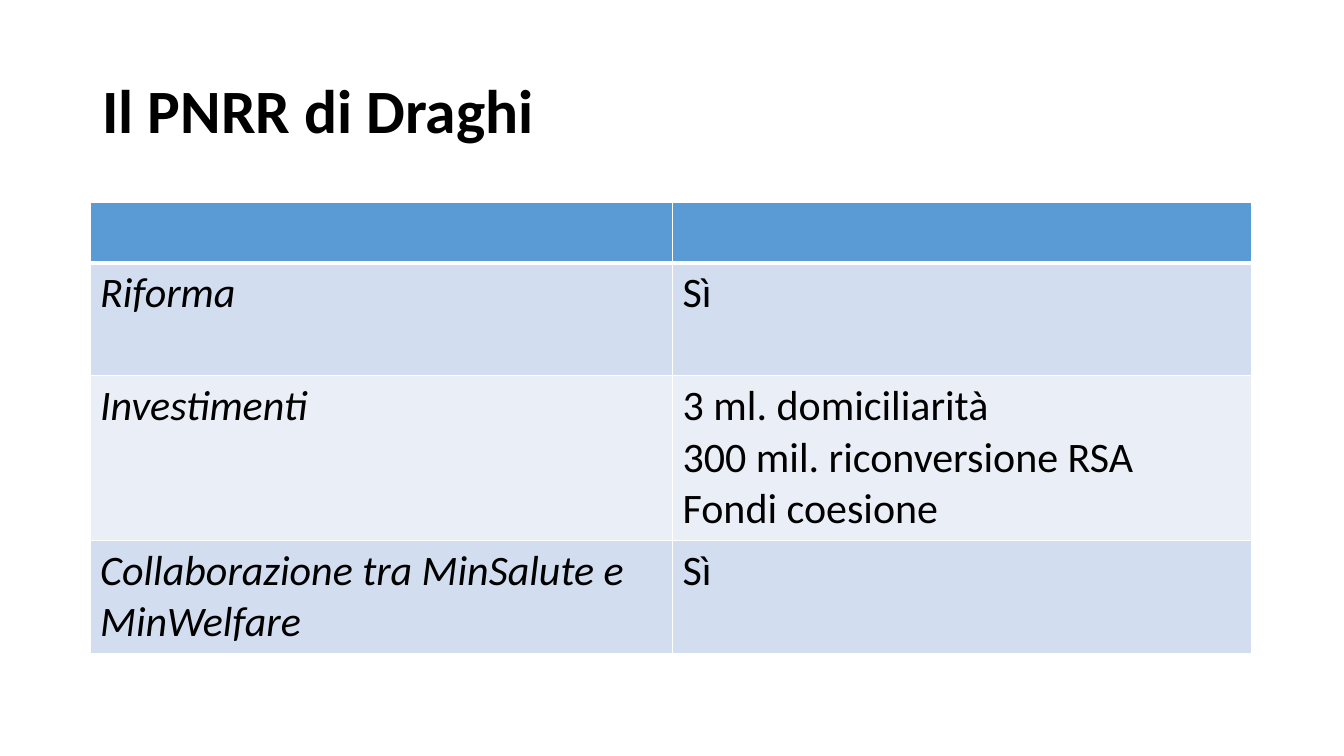
import pptx
import pptx.dml.color
import pptx.enum.text
import pptx.oxml
import pptx.oxml.ns
import pptx.util

Cm = pptx.util.Cm
Pt = pptx.util.Pt


def rgb(value):
    return pptx.dml.color.RGBColor.from_string(value)


class Deck:
    font = "Calibri"
    ink = "000000"
    header = "5B9BD5"
    bands = ("D2DEEF", "EAEFF7")
    line = "FFFFFF"

    def __init__(self, width, height):
        self.prs = pptx.Presentation()
        self.prs.slide_width = Cm(width)
        self.prs.slide_height = Cm(height)
        self.s = self.prs.slides.add_slide(self.prs.slide_layouts[5])

    def text(self, tf, lines, **formats):
        formats = {"name": self.font, **formats}
        for i, line in enumerate(lines):
            p = tf.paragraphs[0] if i == 0 else tf.add_paragraph()
            p.alignment = pptx.enum.text.PP_ALIGN.LEFT
            r = p.add_run()
            r.text = line
            for key, value in formats.items():
                setattr(r.font, key, value)
            r.font.color.rgb = rgb(self.ink)

    def title(self, text, left, top, width, height):
        sp = self.s.shapes.title
        box = {"left": left, "top": top, "width": width, "height": height}
        for key, value in box.items():
            setattr(sp, key, Cm(value))
        tf = sp.text_frame
        tf.word_wrap = True
        tf.vertical_anchor = pptx.enum.text.MSO_ANCHOR.MIDDLE
        self.text(tf, [text], size=Pt(44), bold=True)
        tf.paragraphs[0].line_spacing = 0.9

    def borders(self, cell, **widths):
        tc_pr = cell._tc.get_or_add_tcPr()
        for side in "LRTB":
            tc_pr.append(pptx.oxml.parse_xml(
                f'<a:ln{side} {pptx.oxml.ns.nsdecls("a")} w="{Pt(widths.get(side, 1))}">'
                f'<a:solidFill><a:srgbClr val="{self.line}"/></a:solidFill></a:ln{side}>'))

    def table(self, rows, left, top, widths, heights):
        frame = self.s.shapes.add_table(
            len(rows), len(widths), Cm(left), Cm(top), Cm(sum(widths)), Cm(sum(heights)))
        table = frame.table
        for column, width in zip(table.columns, widths):
            column.width = Cm(width)
        for i, (row, height) in enumerate(zip(rows, heights)):
            table.rows[i].height = Cm(height)
            for j, lines in enumerate(row):
                cell = table.cell(i, j)
                self.borders(cell, T=3 if i == 1 else 1, B=3 if i == 0 else 1)
                cell.fill.solid()
                cell.fill.fore_color.rgb = rgb(self.bands[(i - 1) % 2] if i else self.header)
                self.text(cell.text_frame, lines, size=Pt(30), italic=j == 0)


def main():
    deck = Deck(33.87, 19.05)
    deck.title("Il PNRR di Draghi", 2.33, 1.01, 29.21, 3.68)
    rows = [
        ([], []),
        (["Riforma"], ["Sì"]),
        (["Investimenti"],
         ["3 ml. domiciliarità", "300 mil. riconversione RSA", "Fondi coesione"]),
        (["Collaborazione tra MinSalute e MinWelfare"], ["Sì"]),
    ]
    deck.table(rows, 2.27, 5.09, [14.68, 14.6], [1.53, 2.85, 4.15, 2.83])
    deck.prs.save("out.pptx")


if __name__ == "__main__":
    main()
